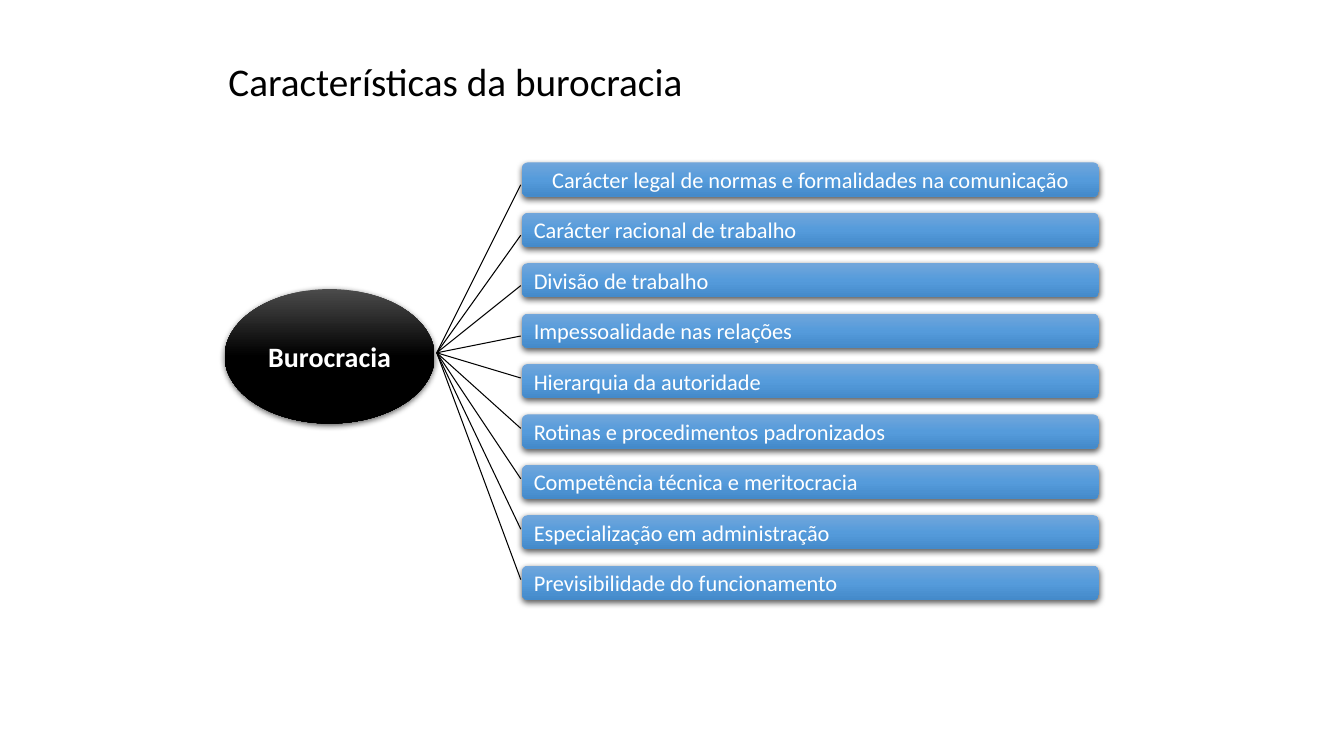
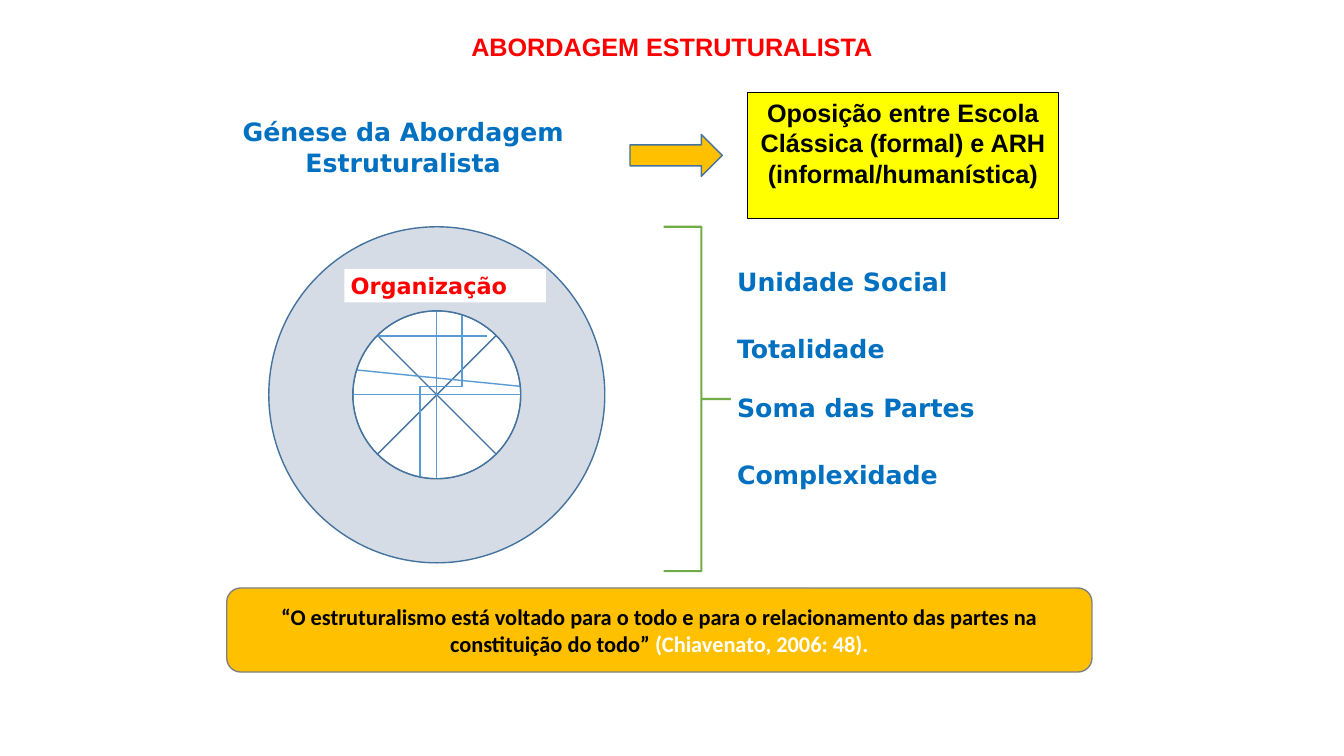
import pptx
import pptx.dml.color
import pptx.enum.shapes
import pptx.enum.text
import pptx.oxml
import pptx.oxml.ns
import pptx.util

Pt = pptx.util.Pt
SHAPE = pptx.enum.shapes.MSO_SHAPE
CONNECTOR = pptx.enum.shapes.MSO_CONNECTOR
ALIGN = pptx.enum.text.PP_ALIGN
ANCHOR = pptx.enum.text.MSO_ANCHOR

BLACK, WHITE, RED, YELLOW = "000000", "FFFFFF", "FF0000", "FFFF00"
BLUE, EDGE, THREAD = "0070C0", "43739E", "5B9BD5"
AMBER, GREEN, GREY, RING = "FFC000", "70AD47", "808080", "D6DCE5"
BAR_STOPS = [(0, "71A6DB"), (50, "559BDB"), (100, "448ACA")]
HUB_STOPS = [(0, "4B4B4B"), (50, BLACK), (100, BLACK)]
SNUG = (4.5, 3.6)

TRAITS = [
    "Carácter legal de normas e formalidades na comunicação",
    "Carácter racional de trabalho",
    "Divisão de trabalho",
    "Impessoalidade nas relações",
    "Hierarquia da autoridade",
    "Rotinas e procedimentos padronizados",
    "Competência técnica e meritocracia",
    "Especialização em administração",
    "Previsibilidade do funcionamento",
]
OPPOSITION = ["Oposição entre Escola", "Clássica (formal) e ARH", "(informal/humanística)"]
QUOTE = "“O estruturalismo está voltado para o todo e para o relacionamento das partes na constituição do todo” "
CITATION = "(Chiavenato, 2006: 48)."
CONCEPTS = [("Unidade Social", 186), ("Totalidade", 234), ("Soma das Partes", 276), ("Complexidade", 324)]
THREADS = [
    ((312, 222), (312, 342)),
    ((252, 282), (372, 282)),
    ((270, 240), (348, 240)),
    ((252, 264), (372, 276)),
]


def color(value):
    return pptx.dml.color.RGBColor.from_string(value)


def write(shape, lines, font, size, bold=False, align=ALIGN.CENTER,
          anchor=ANCHOR.MIDDLE, margins=(7.2, 3.6), spacing=None):
    frame = shape.text_frame
    frame.word_wrap = True
    frame.auto_size = pptx.enum.text.MSO_AUTO_SIZE.NONE
    frame.vertical_anchor = anchor
    frame.margin_left = frame.margin_right = Pt(margins[0])
    frame.margin_top = frame.margin_bottom = Pt(margins[1])
    for index, line in enumerate(lines):
        para = frame.paragraphs[0] if index == 0 else frame.add_paragraph()
        para.alignment = align
        para.line_spacing = spacing
        for text, ink in line:
            span = para.add_run()
            span.text = text
            span.font.name = font
            span.font.size = Pt(size)
            span.font.bold = bold
            span.font.color.rgb = color(ink)


def add_page(deck, title, frame, **style):
    page = deck.slides.add_slide(deck.slide_layouts[5])
    heading = page.shapes.title
    heading.left, heading.top, heading.width, heading.height = map(Pt, frame)
    write(heading, [[title]], spacing=0.9, **style)
    return page


def add_box(page, kind, frame, fill=None, line=None, width=1, adjustments=()):
    box = page.shapes.add_shape(kind, *map(Pt, frame))
    box.shadow.inherit = False
    for index, value in enumerate(adjustments):
        box.adjustments[index] = value
    if fill:
        box.fill.solid()
        box.fill.fore_color.rgb = color(fill)
    else:
        box.fill.background()
    if line:
        box.line.color.rgb = color(line)
        box.line.width = Pt(width)
    else:
        box.line.fill.background()
    return box


def add_glossy(page, kind, frame, stops, adjustments=()):
    box = add_box(page, kind, frame, adjustments=adjustments)
    box.fill.gradient()
    box.fill.gradient_angle = 270
    properties = box._element.spPr
    names = pptx.oxml.ns.nsdecls("a")
    stop_list = properties.find(".//" + pptx.oxml.ns.qn("a:gsLst"))
    for stop in list(stop_list):
        stop_list.remove(stop)
    for position, value in stops:
        stop_list.append(pptx.oxml.parse_xml(
            f'<a:gs {names} pos="{position * 1000}"><a:srgbClr val="{value}"/></a:gs>'))
    properties.find(pptx.oxml.ns.qn("a:effectLst")).append(pptx.oxml.parse_xml(
        f'<a:outerShdw {names} blurRad="{Pt(4.5)}" dist="{Pt(1.5)}" dir="5400000" rotWithShape="0">'
        f'<a:srgbClr val="{BLACK}"><a:alpha val="63000"/></a:srgbClr></a:outerShdw>'))
    return box


def add_line(page, start, end, ink, width, kind=CONNECTOR.STRAIGHT):
    line = page.shapes.add_connector(kind, *map(Pt, start + end))
    line.line.color.rgb = color(ink)
    line.line.width = Pt(width)
    line._element.spPr.append(pptx.oxml.parse_xml(
        f'<a:effectLst {pptx.oxml.ns.nsdecls("a")}/>'))
    return line


def add_label(page, text, frame, ink, size=18, align=ALIGN.LEFT):
    box = add_box(page, SHAPE.RECTANGLE, frame, WHITE)
    write(box, [[(text, ink)]], "DejaVu Sans", size, True, align, margins=SNUG)


def build_traits(deck):
    page = add_page(deck, ("Características da burocracia", BLACK), (156, 30, 648, 60),
                    font="Calibri", size=28, align=ALIGN.LEFT)
    hub = add_glossy(page, SHAPE.OVAL, (160.5, 206.5, 150, 96), HUB_STOPS)
    write(hub, [[("Burocracia", WHITE)]], "Calibri", 20, True)
    for index, trait in enumerate(TRAITS):
        top = 116 + 36 * index
        bar = add_glossy(page, SHAPE.ROUNDED_RECTANGLE, (373, top, 412, 24.5), BAR_STOPS, [0.167])
        align = ALIGN.CENTER if index == 0 else ALIGN.LEFT
        write(bar, [[(trait, WHITE)]], "Calibri", 16, align=align)
        drop = 16 if index < 4 else 10
        add_line(page, (312, 252), (372, top + drop), BLACK, 0.75)


def build_structuralism(deck):
    page = add_page(deck, ("ABORDAGEM ESTRUTURALISTA", RED), (156, 21.5, 648, 44),
                    font="Arial", size=18, bold=True, anchor=ANCHOR.TOP)
    add_box(page, SHAPE.FLOWCHART_SUMMING_JUNCTION, (252, 222, 120, 120), WHITE, EDGE)
    add_box(page, SHAPE.RIGHT_BRACE, (474, 162, 54, 246), None, GREEN, 1.5, [0, 0.5])
    for start, end in THREADS:
        add_line(page, start, end, THREAD, 1)
    elbow = add_line(page, (381, 291), (249, 261), THREAD, 1, CONNECTOR.ELBOW)
    elbow._element.spPr.find(pptx.oxml.ns.qn("a:xfrm")).set("rot", "5400000")
    add_box(page, SHAPE.DONUT, (192, 162, 240, 240), RING, EDGE)
    add_label(page, "Organização", (246, 192, 144, 24), RED, 16)
    quote = add_box(page, SHAPE.ROUNDED_RECTANGLE, (162, 420, 618, 60), AMBER, GREY)
    write(quote, [[(QUOTE, BLACK), (CITATION, WHITE)]], "Calibri", 16, True)
    opposition = add_box(page, SHAPE.RECTANGLE, (534, 66, 222, 90), YELLOW, BLACK, 0.75)
    write(opposition, [[(line, BLACK)] for line in OPPOSITION], "Arial", 18, True, anchor=ANCHOR.TOP)
    add_box(page, SHAPE.RIGHT_ARROW, (450, 96, 66, 30), AMBER, EDGE)
    add_label(page, "Génese da Abordagem Estruturalista", (162, 78, 252, 54), BLUE, align=ALIGN.CENTER)
    for concept, top in CONCEPTS:
        add_label(page, concept, (522, top, 252, 30), BLUE)


def main():
    deck = pptx.Presentation()
    deck.slide_width, deck.slide_height = Pt(960), Pt(540)
    build_traits(deck)
    build_structuralism(deck)
    deck.save("out.pptx")


if __name__ == "__main__":
    main()
